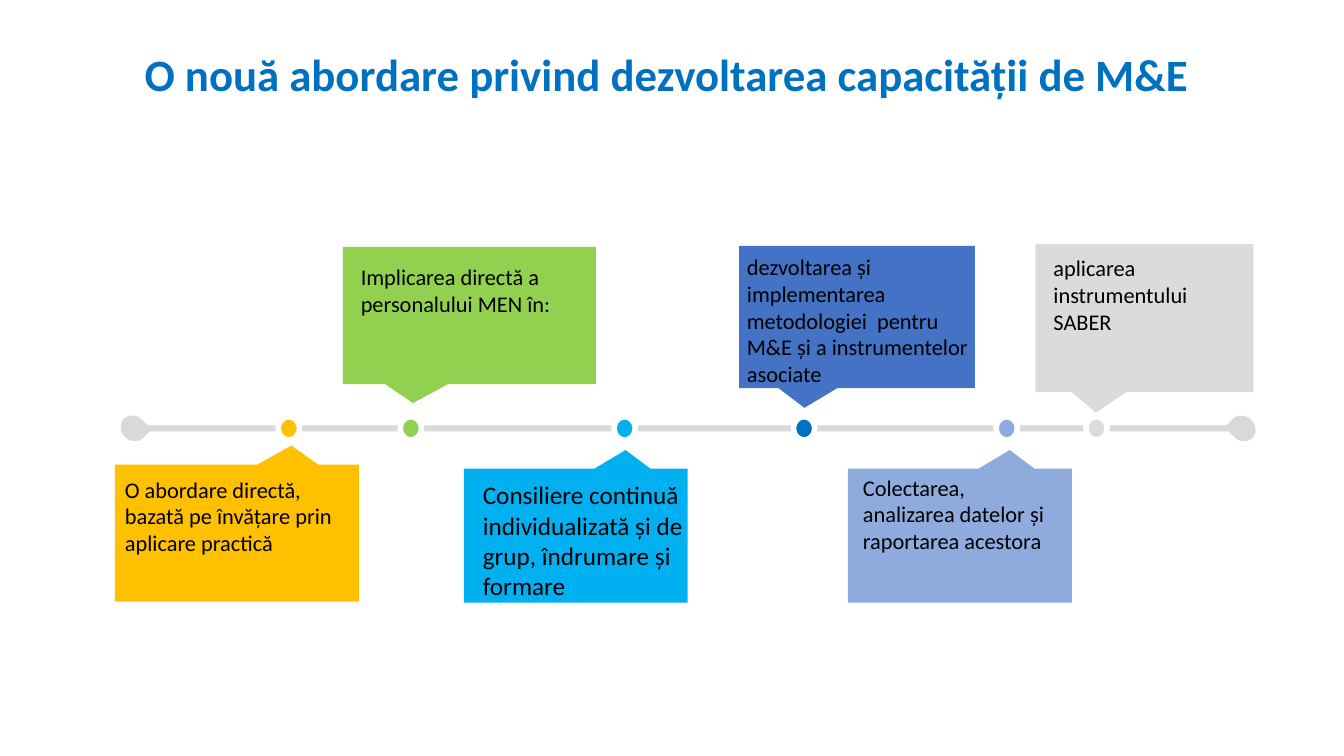
import pptx
import pptx.util
import pptx.dml.color
import pptx.enum.shapes
import pptx.enum.text

Inches = pptx.util.Inches
SHAPES = pptx.enum.shapes.MSO_SHAPE
FONT = "Calibri"
RAIL_COLOR = "D9D9D9"

# Dot left, colour, callout box, points down, text box, text, text size
MILESTONES = [
    (2.76, "FFC000", (1.14, 4.61, 2.42, 1.36), False, (1.14, 4.67, 2.52, 0.91),
     "O abordare directă, bazată pe învățare prin aplicare practică", 16),
    (3.97, "92D050", (3.4, 2.45, 2.51, 1.36), True, (3.48, 2.56, 2.42, 0.64),
     "Implicarea directă a personalului MEN în:", 16),
    (6.09, "00B0F0", (4.6, 4.65, 2.22, 1.33), False, (4.69, 4.71, 2.61, 1.31),
     "Consiliere continuă individualizată și de grup, îndrumare și formare", 18),
    (7.87, "0070C0", (7.33, 2.44, 2.34, 1.41), True, (7.31, 2.46, 2.54, 1.45),
     "dezvoltarea și implementarea metodologiei  pentru M&E și a instrumentelor asociate", 16),
    (9.88, "8FAADC", (8.41, 4.65, 2.22, 1.33), False, (8.46, 4.65, 2.05, 0.91),
     "Colectarea, analizarea datelor și raportarea acestora", 16),
    (10.77, "DBDBDB", (10.27, 2.42, 2.16, 1.47), True, (10.35, 2.47, 2, 0.91),
     "aplicarea instrumentului SABER", 16),
]
CALLOUT_COLORS = {"0070C0": "4472C4"}  # callouts that differ from their dot


def color(hex_string):
    return pptx.dml.color.RGBColor.from_string(hex_string)


def write_text(shape, text, size=16, hex_color="000000", bold=False, wrap=True,
               align=pptx.enum.text.PP_ALIGN.LEFT):
    frame = shape.text_frame
    frame.word_wrap = wrap
    frame.auto_size = pptx.enum.text.MSO_AUTO_SIZE.NONE
    frame.vertical_anchor = pptx.enum.text.MSO_ANCHOR.TOP
    paragraph = frame.paragraphs[0]
    paragraph.alignment = align
    run = paragraph.add_run()
    run.text = text
    run.font.name = FONT
    run.font.size = pptx.util.Pt(size)
    run.font.bold = bold
    run.font.color.rgb = color(hex_color)


def add_filled(group, kind, box, fill, rotation=0):
    shape = group.shapes.add_shape(kind, *map(Inches, box))
    shape.shadow.inherit = False
    shape.fill.solid()
    shape.fill.fore_color.rgb = color(fill)
    shape.line.fill.background()
    shape.rotation = rotation
    return shape


def add_title(slide, box):
    title = slide.shapes.title
    title.left, title.top, title.width, title.height = map(Inches, box)
    write_text(title, "O nouă abordare privind dezvoltarea capacității de M&E", size=32,
               hex_color="0070C0", bold=True, wrap=False,
               align=pptx.enum.text.PP_ALIGN.CENTER)


def add_rail(group, box):
    left, top, width, height = box
    add_filled(group, SHAPES.RECTANGLE, box, RAIL_COLOR)
    # Teardrop ends point inwards
    end_width, end_height, overhang = 0.27, 0.24, 0.17
    end_top = top + (height - end_height) / 2
    for end_left, rotation in ((left - overhang, 45),
                               (left + width + overhang - 0.06 - end_width, 225)):
        add_filled(group, SHAPES.TEAR, (end_left, end_top, end_width, end_height),
                   RAIL_COLOR, rotation)


def add_dot(group, box, fill):
    dot = add_filled(group, SHAPES.OVAL, box, fill)
    dot.line.color.rgb = color("FFFFFF")
    dot.line.width = pptx.util.Pt(4)


def add_callout(group, box, fill, points_down, text_box, text, size):
    callout = add_filled(group, SHAPES.RECTANGULAR_CALLOUT, box, fill,
                         180 if points_down else 0)
    callout.adjustments[0] = 0.223
    callout.adjustments[1] = -0.639
    label = group.shapes.add_textbox(*map(Inches, text_box))
    write_text(label, text, size=size)


def add_timeline(slide, rail_box):
    group = slide.shapes.add_group_shape()
    add_rail(group, rail_box)
    dot_width, dot_height = 0.21, 0.23
    dot_top = rail_box[1] + (rail_box[3] - dot_height) / 2
    for dot_left, fill, box, points_down, text_box, text, size in MILESTONES:
        add_dot(group, (dot_left, dot_top, dot_width, dot_height), fill)
        add_callout(group, box, CALLOUT_COLORS.get(fill, fill), points_down,
                    text_box, text, size)


def main():
    presentation = pptx.Presentation()
    presentation.slide_width = Inches(13.33)
    presentation.slide_height = Inches(7.5)
    slide = presentation.slides.add_slide(presentation.slide_layouts[5])
    add_title(slide, (1.29, 0.41, 10.65, 0.64))
    add_timeline(slide, (1.36, 4.22, 10.99, 0.06))
    presentation.save("out.pptx")


if __name__ == "__main__":
    main()
